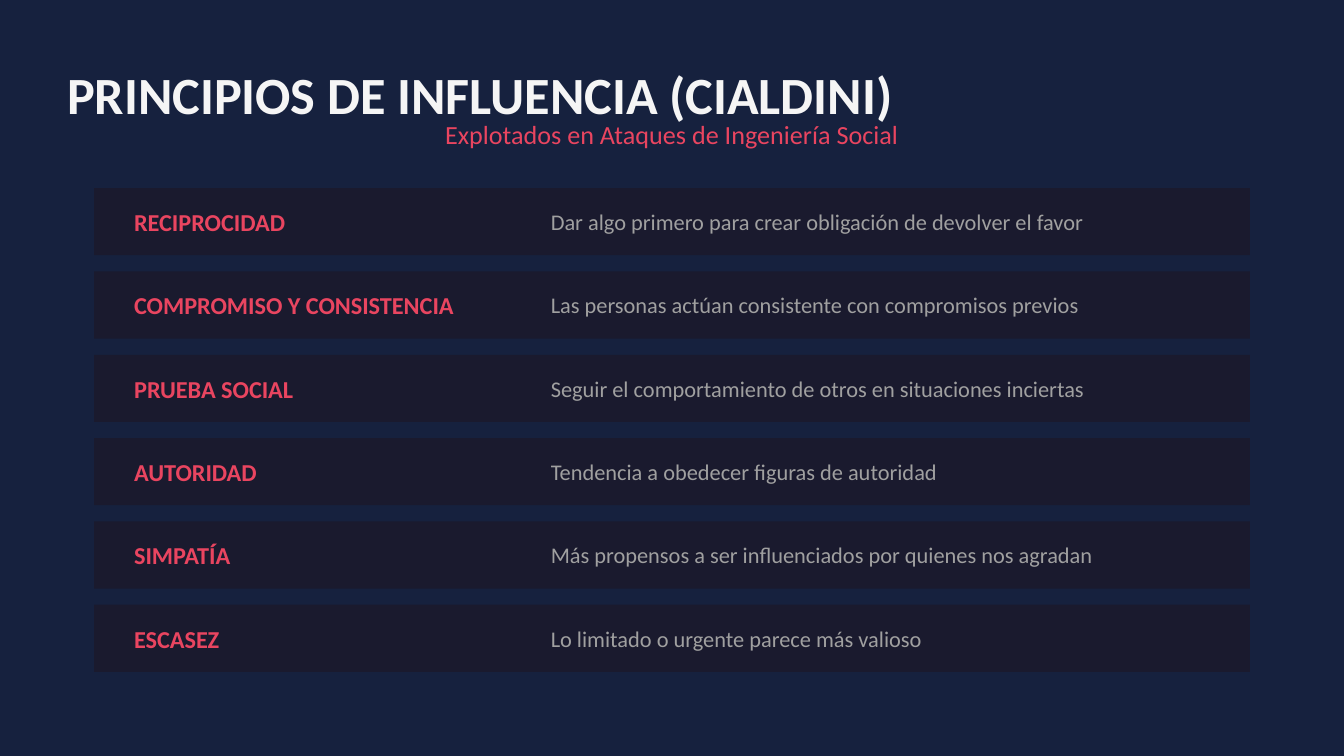
from pptx import Presentation
from pptx.dml.color import RGBColor
from pptx.enum.shapes import MSO_SHAPE
from pptx.enum.text import MSO_ANCHOR, PP_ALIGN
from pptx.util import Pt

NAVY = RGBColor(0x16, 0x21, 0x3E)
DARK = RGBColor(0x1A, 0x1A, 0x2E)
WHITE = RGBColor(0xF5, 0xF5, 0xF5)
RED = RGBColor(0xE9, 0x45, 0x60)
GREY = RGBColor(0xA0, 0xA0, 0xA0)

FONT = "Calibri"
FIRST_ROW_TOP = 100.8
ROW_PITCH = 44.64
ROW_HEIGHT = 36
TEXT_INSET = 3.6

PRINCIPLES = [
    ("RECIPROCIDAD", "Dar algo primero para crear obligación de devolver el favor"),
    ("COMPROMISO Y CONSISTENCIA", "Las personas actúan consistente con compromisos previos"),
    ("PRUEBA SOCIAL", "Seguir el comportamiento de otros en situaciones inciertas"),
    ("AUTORIDAD", "Tendencia a obedecer figuras de autoridad"),
    ("SIMPATÍA", "Más propensos a ser influenciados por quienes nos agradan"),
    ("ESCASEZ", "Lo limitado o urgente parece más valioso"),
]


def add_text(slide, text, left, top, width, height, size, color,
             bold=False, align=PP_ALIGN.LEFT):
    """Add a vertically centred text box and return its text frame."""
    box = slide.shapes.add_textbox(Pt(left), Pt(top), Pt(width), Pt(height))
    frame = box.text_frame
    frame.word_wrap = True
    frame.vertical_anchor = MSO_ANCHOR.MIDDLE
    paragraph = frame.paragraphs[0]
    paragraph.alignment = align
    run = paragraph.add_run()
    run.text = text
    run.font.name = FONT
    run.font.size = Pt(size)
    run.font.bold = bold
    run.font.color.rgb = color
    return frame


def add_title(slide, text):
    frame = add_text(slide, text, 36, 28.8, 648, 43.2, 28, WHITE, bold=True)
    frame.margin_left = frame.margin_right = Pt(0)
    frame.margin_top = frame.margin_bottom = Pt(0)


def add_principle_row(slide, top, name, description):
    bar = slide.shapes.add_shape(
        MSO_SHAPE.RECTANGLE, Pt(50.4), Pt(top), Pt(619.2), Pt(ROW_HEIGHT))
    bar.shadow.inherit = False
    bar.fill.solid()
    bar.fill.fore_color.rgb = DARK
    bar.line.fill.background()

    text_top = top + TEXT_INSET
    text_height = ROW_HEIGHT - 2 * TEXT_INSET
    add_text(slide, name, 64.8, text_top, 216, text_height, 13, RED, bold=True)
    add_text(slide, description, 288, text_top, 360, text_height, 12, GREY)


def main():
    presentation = Presentation()
    presentation.slide_width = Pt(720)
    presentation.slide_height = Pt(405)
    slide = presentation.slides.add_slide(presentation.slide_layouts[6])
    slide.background.fill.solid()
    slide.background.fill.fore_color.rgb = NAVY

    add_title(slide, "PRINCIPIOS DE INFLUENCIA (CIALDINI)")
    add_text(slide, "Explotados en Ataques de Ingeniería Social",
             36, 61.2, 648, 21.6, 14, RED, align=PP_ALIGN.CENTER)
    for index, (name, description) in enumerate(PRINCIPLES):
        add_principle_row(slide, FIRST_ROW_TOP + index * ROW_PITCH, name, description)

    presentation.save("out.pptx")


if __name__ == "__main__":
    main()
